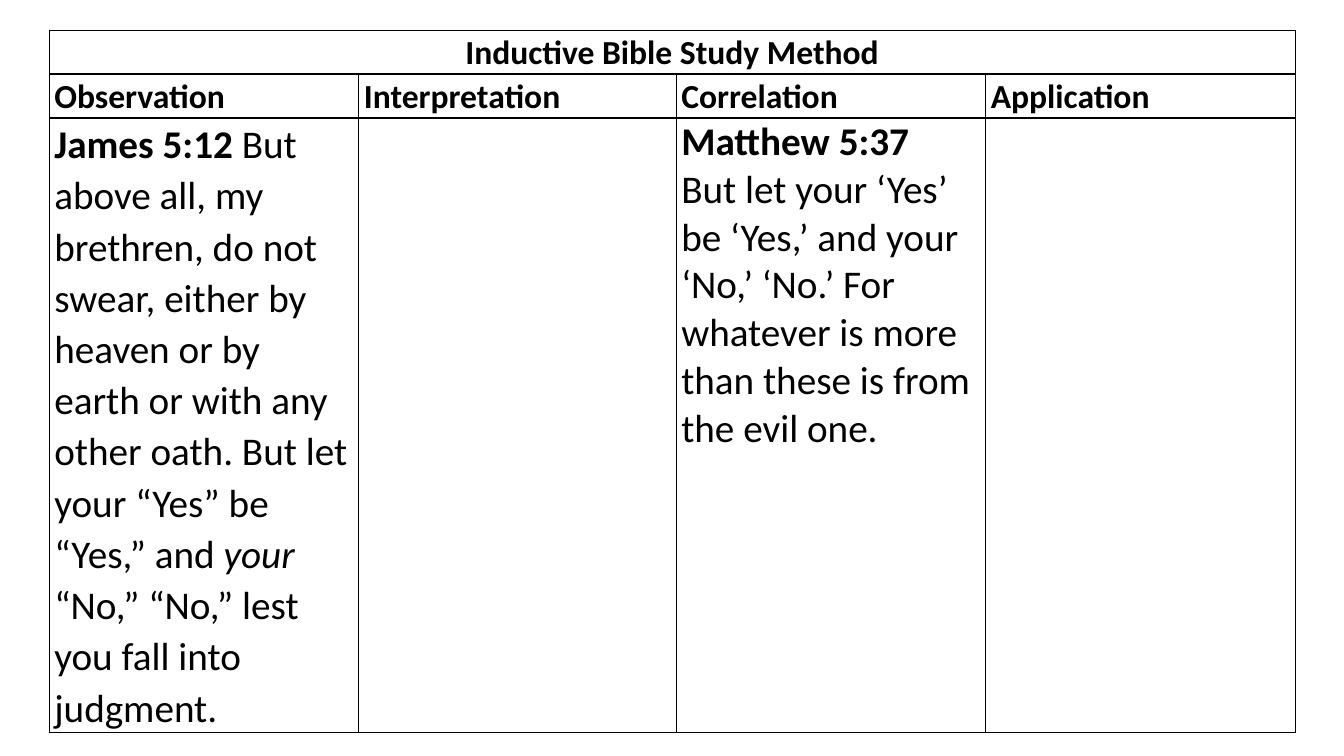
from lxml import etree
from pptx import Presentation
from pptx.dml.color import RGBColor
from pptx.enum.text import PP_ALIGN
from pptx.oxml.ns import qn
from pptx.util import Cm, Pt

# Content: a cell is a list of paragraphs, a paragraph a list of (text, style)
TITLE = "Inductive Bible Study Method"
HEADINGS = ["Observation", "Interpretation", "Correlation", "Application"]
OBSERVATION = [
    [("James 5:12 ", "bold"),
     ("But above all, my brethren, do not swear, either by heaven or by earth "
      "or with any other oath. But let your “Yes” be “Yes,” and ", ""),
     ("your ", "italic")],
    [("“No,” “No,” lest you fall into judgment.", "")],
]
CORRELATION = [
    [("Matthew 5:37 ", "bold")],
    [("But let your ‘Yes’ be ‘Yes,’ and your ‘No,’ ‘No.’ For whatever is more "
      "than these is from the evil one.", "")],
]

# Look
BLACK = RGBColor(0x00, 0x00, 0x00)
WHITE = RGBColor(0xFF, 0xFF, 0xFF)
CENTER = PP_ALIGN.CENTER
LEFT = PP_ALIGN.LEFT
FONT = "Calibri"
HEADING_SIZE = Pt(24)
BODY_SIZE = Pt(28)
LOOSE = 1.07
BORDER_WIDTH = Pt(1)
BORDER_SIDES = ["a:lnL", "a:lnR", "a:lnT", "a:lnB"]

# Layout
TABLE_LEFT, TABLE_TOP = Cm(1.24), Cm(0.76)
COLUMN_WIDTHS = [Cm(7.8), Cm(8), Cm(7.8), Cm(7.8)]
ROW_HEIGHTS = [Cm(1.04), Cm(1.09), Cm(14.88)]
SIDE_MARGIN = Cm(0.13)


def write_text(cell, paragraphs, size=BODY_SIZE, align=LEFT, spacing=None):
    frame = cell.text_frame
    for index, spans in enumerate(paragraphs):
        para = frame.add_paragraph() if index else frame.paragraphs[0]
        para.alignment = align
        para.line_spacing = spacing
        for text, style in spans:
            span = para.add_run()
            span.text = text
            span.font.name = FONT
            span.font.size = size
            span.font.bold = style == "bold"
            span.font.italic = style == "italic"
            span.font.color.rgb = BLACK


def format_cell(cell):
    cell.margin_left = cell.margin_right = SIDE_MARGIN
    cell.margin_top = cell.margin_bottom = 0
    cell.fill.solid()
    cell.fill.fore_color.rgb = WHITE
    # Borders come before the fill in the cell properties
    properties = cell._tc.get_or_add_tcPr()
    for position, side in enumerate(BORDER_SIDES):
        line = etree.Element(qn(side), w=str(BORDER_WIDTH))
        fill = etree.SubElement(line, qn("a:solidFill"))
        etree.SubElement(fill, qn("a:srgbClr"), val=str(BLACK))
        properties.insert(position, line)


def main():
    deck = Presentation()
    deck.slide_width, deck.slide_height = Cm(33.87), Cm(19.05)
    page = deck.slides.add_slide(deck.slide_layouts[6])

    # Table grid
    table = page.shapes.add_table(
        len(ROW_HEIGHTS), len(COLUMN_WIDTHS), TABLE_LEFT, TABLE_TOP,
        sum(COLUMN_WIDTHS), sum(ROW_HEIGHTS)).table
    for column, width in zip(table.columns, COLUMN_WIDTHS):
        column.width = width
    for row, height in zip(table.rows, ROW_HEIGHTS):
        row.height = height
    for cell in table.iter_cells():
        format_cell(cell)

    # Title row across all columns
    title = table.cell(0, 0)
    title.merge(table.cell(0, len(COLUMN_WIDTHS) - 1))
    write_text(title, [[(TITLE, "bold")]], size=HEADING_SIZE,
               align=CENTER, spacing=LOOSE)

    # Column headings
    for index, heading in enumerate(HEADINGS):
        write_text(table.cell(1, index), [[(heading, "bold")]],
                   size=HEADING_SIZE, spacing=LOOSE)

    # Verses
    write_text(table.cell(2, 0), OBSERVATION, spacing=LOOSE)
    write_text(table.cell(2, 2), CORRELATION)

    deck.save("out.pptx")


if __name__ == "__main__":
    main()
